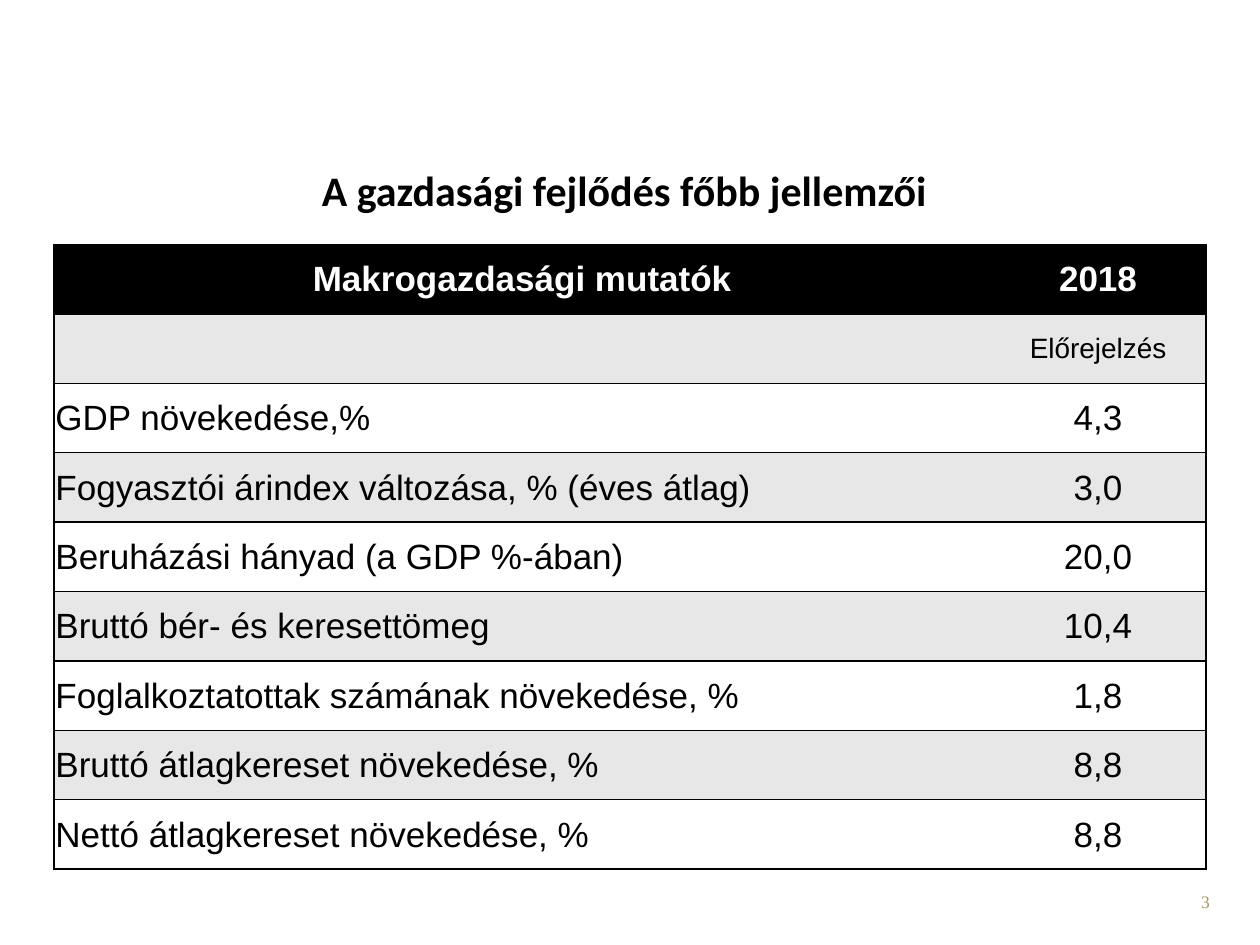
"""Build a slide with a table of the main macroeconomic indicators."""
from lxml import etree
from pptx import Presentation, util as u
from pptx.dml.color import RGBColor
from pptx.enum import text
from pptx.oxml import ns

COLORS = {"black": "000000", "white": "FFFFFF", "band": "E7E7E7", "gold": "A69765"}
ALIGN = text.PP_ALIGN
MIDDLE, TOP = text.MSO_ANCHOR.MIDDLE, text.MSO_ANCHOR.TOP


def write(tf, words, align, color, **font):
    p = tf.paragraphs[0]
    p.alignment = align
    r = p.add_run()
    r.text = words
    for name, value in font.items():
        setattr(r.font, name, value)
    r.font.color.rgb = RGBColor.from_string(COLORS[color])


def add_borders(cell, sides):
    tc_pr = cell._tc.get_or_add_tcPr()
    for i, side in enumerate("LRTB"):
        ln = etree.Element(ns.qn(f"a:ln{side}"), w=str(u.Pt(1)))
        if side in sides:
            fill = etree.SubElement(ln, ns.qn("a:solidFill"))
            etree.SubElement(fill, ns.qn("a:srgbClr"), val=COLORS["black"])
        else:
            etree.SubElement(ln, ns.qn("a:noFill"))
        tc_pr.insert(i, ln)


prs = Presentation()
prs.slide_width, prs.slide_height = u.Inches(10), u.Inches(7.5)
s = prs.slides.add_slide(prs.slide_layouts[6])

labels = [
    ((7.37, 7.02, 2.33, 0.4), "3", ALIGN.RIGHT, TOP, "gold",
     {"name": "Times New Roman", "size": u.Pt(10)}),
    ((0.35, 1.31, 9.21, 0.39), "A gazdasági fejlődés főbb jellemzői", ALIGN.CENTER, MIDDLE, "black",
     {"name": "Calibri", "size": u.Pt(24), "bold": True}),
]
for box, words, align, anchor, color, font in labels:
    tf = s.shapes.add_textbox(*map(u.Inches, box)).text_frame
    tf.word_wrap = True
    tf.vertical_anchor = anchor
    write(tf, words, align, color, **font)

rows = [
    ("Makrogazdasági mutatók", "2018"),
    ("", "Előrejelzés"),
    ("GDP növekedése,%", "4,3"),
    ("Fogyasztói árindex változása, % (éves átlag)", "3,0"),
    ("Beruházási hányad (a GDP %-ában)", "20,0"),
    ("Bruttó bér- és keresettömeg", "10,4"),
    ("Foglalkoztatottak számának növekedése, %", "1,8"),
    ("Bruttó átlagkereset növekedése, %", "8,8"),
    ("Nettó átlagkereset növekedése, %", "8,8"),
]
widths = [7.43, 1.71]
row_height = 4.96 / len(rows)
frame = s.shapes.add_table(len(rows), len(widths), u.Inches(0.43), u.Inches(1.94),
                           u.Inches(sum(widths)), u.Inches(4.96))
table = frame.table
for column, width in zip(table.columns, widths):
    column.width = u.Inches(width)

cell_format = {"vertical_anchor": MIDDLE, "margin_left": u.Inches(0.01),
               "margin_right": u.Inches(0.01), "margin_top": u.Inches(0.01), "margin_bottom": 0}
for i, row in enumerate(rows):
    table.rows[i].height = u.Inches(row_height)
    header = i == 0
    fill = "black" if header else "band" if i % 2 else "white"
    for j, words in enumerate(row):
        cell = table.cell(i, j)
        for name, value in cell_format.items():
            setattr(cell, name, value)
        cell.fill.solid()
        cell.fill.fore_color.rgb = RGBColor.from_string(COLORS[fill])
        add_borders(cell, "RTB" if j else "LTB")
        if words:
            write(cell.text_frame, words, ALIGN.CENTER if header or j else ALIGN.LEFT,
                  "white" if header else "black", name="Arial",
                  size=u.Pt(16 if i == 1 else 20), bold=header)

prs.save("out.pptx")
